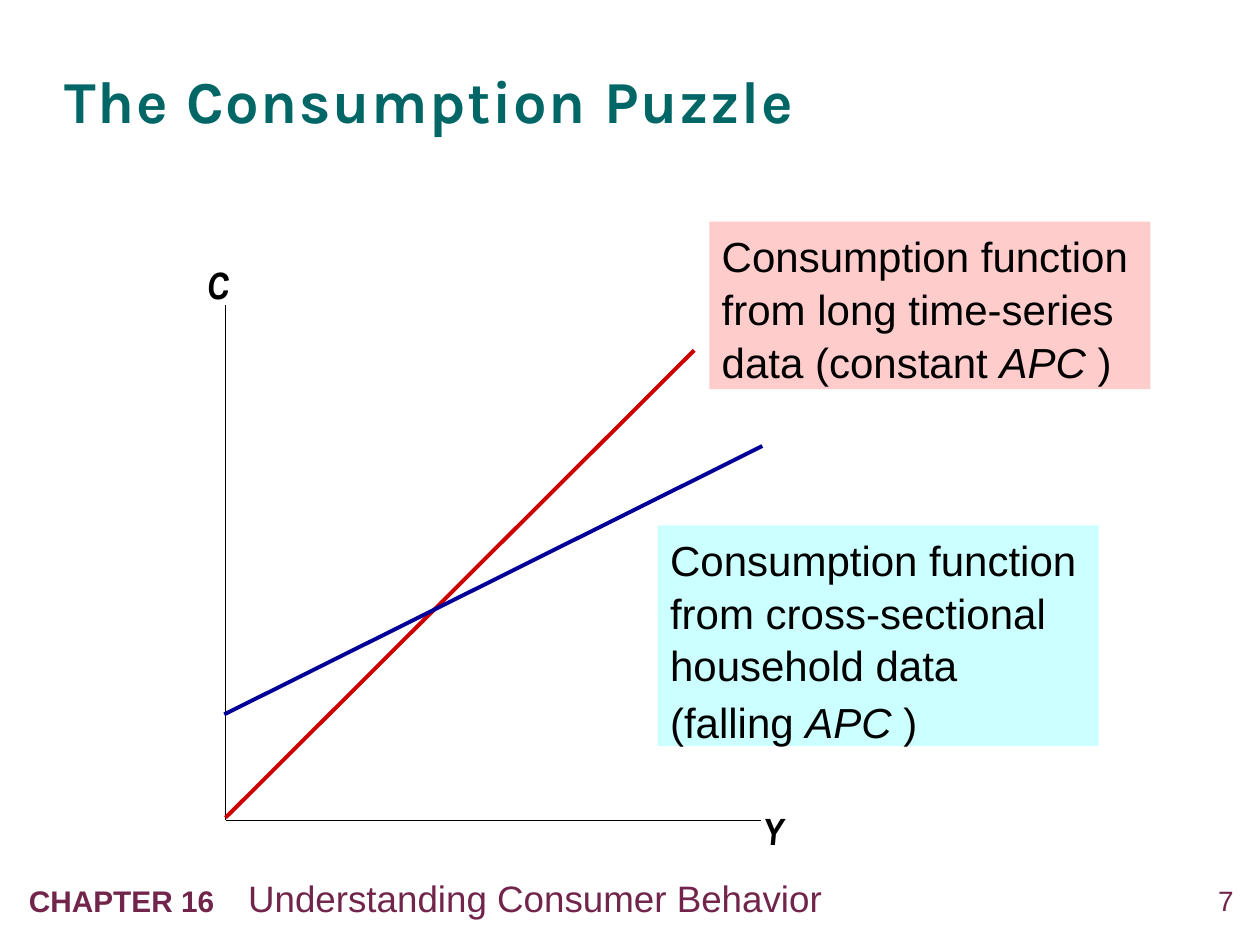
from lxml.etree import SubElement
from pptx import Presentation
from pptx.dml.color import RGBColor
from pptx.enum.shapes import MSO_CONNECTOR as CONN, MSO_SHAPE as SHAPE
from pptx.enum.text import MSO_ANCHOR as ANCHOR, MSO_AUTO_SIZE as FIT, PP_ALIGN as ALIGN
from pptx.oxml.ns import qn
from pptx.util import Inches, Pt

PLUM, TEAL, BLACK, RED, BLUE = "71254B", "006666", "000000", "CC0000", "000099"
PINK, CYAN = "FFCCCC", "CCFFFF"


def rgb(value):
    return RGBColor.from_string(value)


class SlideBuilder:
    """Holds the text styles and the current slide, and adds its elements."""

    styles = {
        "title": dict(name="Karla", size=Pt(34), bold=True, color=TEAL),
        "axis": dict(name="Karla", size=Pt(23), bold=True, italic=True, color=BLACK),
        "note": dict(name="Arial", size=Pt(24), color=BLACK),
        "term": dict(name="Arial", size=Pt(24), italic=True, color=BLACK),
        "chapter": dict(name="Arial", size=Pt(17), bold=True, color=PLUM),
        "topic": dict(name="Arial", size=Pt(21), color=PLUM),
        "number": dict(name="Arial", size=Pt(16), color=PLUM),
    }

    def __init__(self, prs):
        self.s = prs.slides.add_slide(prs.slide_layouts[5])

    def fill_text(self, sp, paragraphs, margins=None, frame=None, para=None):
        tf = sp.text_frame
        frame_format = dict(word_wrap=True, auto_size=FIT.NONE, vertical_anchor=ANCHOR.TOP)
        frame_format.update(frame or {})
        if margins is not None:
            for side in ("left", "top", "right", "bottom"):
                frame_format["margin_" + side] = Inches(margins)
        for key, value in frame_format.items():
            setattr(tf, key, value)
        for i, runs in enumerate(paragraphs):
            p = tf.add_paragraph() if i else tf.paragraphs[0]
            for key, value in dict(dict(alignment=ALIGN.LEFT), **(para or {})).items():
                setattr(p, key, value)
            for text, style in runs:
                r = p.add_run()
                r.text = text
                for key, value in self.styles[style].items():
                    if key == "color":
                        r.font.color.rgb = rgb(value)
                    else:
                        setattr(r.font, key, value)
        return tf

    def title(self, text, *box):
        sp = self.s.shapes.title
        for key, value in zip(("left", "top", "width", "height"), box):
            setattr(sp, key, Inches(value))
        tf = self.fill_text(sp, [[(text, "title")]], 0, dict(vertical_anchor=ANCHOR.MIDDLE),
                            dict(line_spacing=1.05))
        tf.paragraphs[0].runs[0].font._element.set("spc", "100")

    def text(self, runs, *box, **options):
        sp = self.s.shapes.add_textbox(*map(Inches, box))
        return self.fill_text(sp, [runs], **options)

    def note(self, paragraphs, fill, *box):
        sp = self.s.shapes.add_shape(SHAPE.RECTANGLE, *map(Inches, box))
        sp.shadow.inherit = False
        sp.fill.solid()
        sp.fill.fore_color.rgb = rgb(fill)
        sp.line.fill.background()
        self.fill_text(sp, paragraphs, para=dict(line_spacing=1.05, space_before=Pt(2.4)))

    def line(self, start, end, color, width):
        sp = self.s.shapes.add_connector(CONN.STRAIGHT, *map(Inches, start + end))
        sp.line.color.rgb = rgb(color)
        sp.line.width = Pt(width)
        SubElement(sp._element.spPr, qn("a:effectLst"))

    def tab_stop(self, tf, position):
        tabs = SubElement(tf.paragraphs[0]._p.get_or_add_pPr(), qn("a:tabLst"))
        SubElement(tabs, qn("a:tab"), pos=str(Inches(position)), algn="l")


def main():
    prs = Presentation()
    prs.slide_width, prs.slide_height = Inches(10), Inches(7.5)
    b = SlideBuilder(prs)

    b.text([("7", "number")], 9.24, 7.01, 0.55, 0.32, margins=0, para=dict(alignment=ALIGN.RIGHT))
    footer = b.text([("CHAPTER 16\t", "chapter"), ("Understanding Consumer Behavior", "topic")],
                    0.13, 6.9, 8.18, 0.45)
    b.tab_stop(footer, 1.74)
    b.title("The Consumption Puzzle", 0.51, 0.26, 9.02, 1.03)

    origin = (1.79, 6.51)
    for label, axis_end, left, top in (("C", (1.79, 2.42), 1.54, 2.01),
                                       ("Y", (6.04, 6.51), 5.95, 6.34)):
        b.line(origin, axis_end, BLACK, 0.75)
        b.text([(label, "axis")], left, top, 0.5, 0.48)

    b.line((1.79, 6.49), (5.51, 2.78), RED, 2.25)
    b.note([[("Consumption function from long time-series data (constant ", "note"),
             ("APC ", "term"), (")", "note")]], PINK, 5.63, 1.76, 3.5, 1.33)
    b.line((1.78, 5.67), (6.05, 3.54), BLUE, 2.25)
    b.note([[("Consumption function from cross-sectional household data", "note")],
            [("(falling ", "note"), ("APC ", "term"), (")", "note")]],
           CYAN, 5.22, 4.17, 3.5, 1.75)
    prs.save("out.pptx")


if __name__ == "__main__":
    main()
